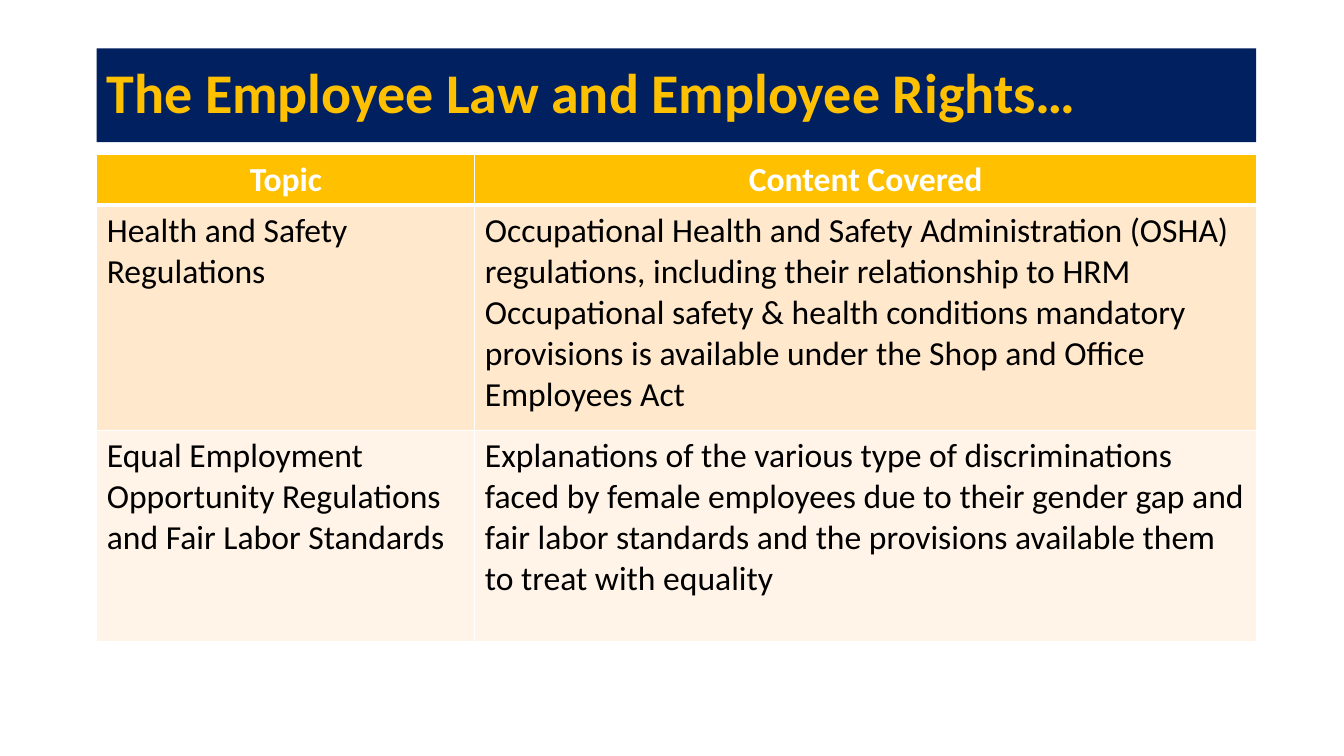
from pptx import Presentation, util as u
from pptx.dml import color
from pptx.enum import shapes, text
from pptx.oxml import parse_xml
from pptx.oxml.ns import nsdecls

HUES = {"navy": "002060", "gold": "FFC000", "white": "FFFFFF",
        "black": "000000", "peach": "FFE8CC", "cream": "FFF4E7"}
ROWS = [
    ("Topic", "Content Covered"),
    ("Health and Safety Regulations",
     "Occupational Health and Safety Administration (OSHA) regulations, "
     "including their relationship to HRM Occupational safety & health "
     "conditions mandatory provisions is available under the Shop and "
     "Office Employees Act"),
    ("Equal Employment Opportunity Regulations and Fair Labor Standards",
     "Explanations of the various type of discriminations faced by female "
     "employees due to their gender gap and fair labor standards and the "
     "provisions available them to treat with equality"),
]
WIDTHS = [3.75, 7.75]
HEIGHTS = [0.5, 2.23, 2.1]
FILLS = ["gold", "peach", "cream"]


class Deck:
    """Hold the style and the current slide, and draw its elements."""

    def __init__(self):
        self.prs = Presentation()
        self.prs.slide_width = u.Inches(13.33)
        self.prs.slide_height = u.Inches(7.5)
        self.slide = self.prs.slides.add_slide(self.prs.slide_layouts[6])
        self.font = "Calibri"

    def paint(self, fill, hue):
        fill.solid()
        fill.fore_color.rgb = color.RGBColor.from_string(HUES[hue])

    def label(self, frame, words, hue, size, bold, **form):
        para = frame.paragraphs[0]
        for key, val in form.items():
            setattr(para, key, val)
        run = para.add_run()
        run.text = words
        style = {"name": self.font, "size": u.Pt(size), "bold": bold}
        for key, val in style.items():
            setattr(run.font, key, val)
        run.font.color.rgb = color.RGBColor.from_string(HUES[hue])

    def title(self, words, *box):
        bar = self.slide.shapes.add_shape(
            shapes.MSO_SHAPE.RECTANGLE, *map(u.Inches, box))
        bar.shadow.inherit = False
        bar.line.fill.background()
        self.paint(bar.fill, "navy")
        frame = bar.text_frame
        frame.word_wrap = True
        frame.vertical_anchor = text.MSO_ANCHOR.MIDDLE
        self.label(frame, words, "gold", 40, True,
                   alignment=text.PP_ALIGN.LEFT, line_spacing=0.9)

    def border(self, cell, row):
        props = cell._tc.get_or_add_tcPr()
        wide = {"T": 3 if row == 1 else 1, "B": 3 if row == 0 else 1}
        for side in "LRTB":
            props.append(parse_xml(
                f'<a:ln{side} {nsdecls("a")} w="{u.Pt(wide.get(side, 1))}">'
                f'<a:solidFill><a:srgbClr val="{HUES["white"]}"/>'
                f'</a:solidFill></a:ln{side}>'))

    def table(self, rows, left, top):
        grid = self.slide.shapes.add_table(
            len(rows), len(WIDTHS), u.Inches(left), u.Inches(top),
            u.Inches(sum(WIDTHS)), u.Inches(sum(HEIGHTS))).table
        for col, width in zip(grid.columns, WIDTHS):
            col.width = u.Inches(width)
        for i, line in enumerate(rows):
            grid.rows[i].height = u.Inches(HEIGHTS[i])
            head = i == 0
            side = text.PP_ALIGN.CENTER if head else text.PP_ALIGN.LEFT
            for j, words in enumerate(line):
                cell = grid.cell(i, j)
                self.border(cell, i)
                self.paint(cell.fill, FILLS[i])
                self.label(cell.text_frame, words,
                           "white" if head else "black", 24, head,
                           alignment=side)


def main():
    deck = Deck()
    deck.title("The Employee Law and Employee Rights…", 0.96, 0.48, 11.5, 0.93)
    deck.table(ROWS, 0.96, 1.53)
    deck.prs.save("out.pptx")


if __name__ == "__main__":
    main()
